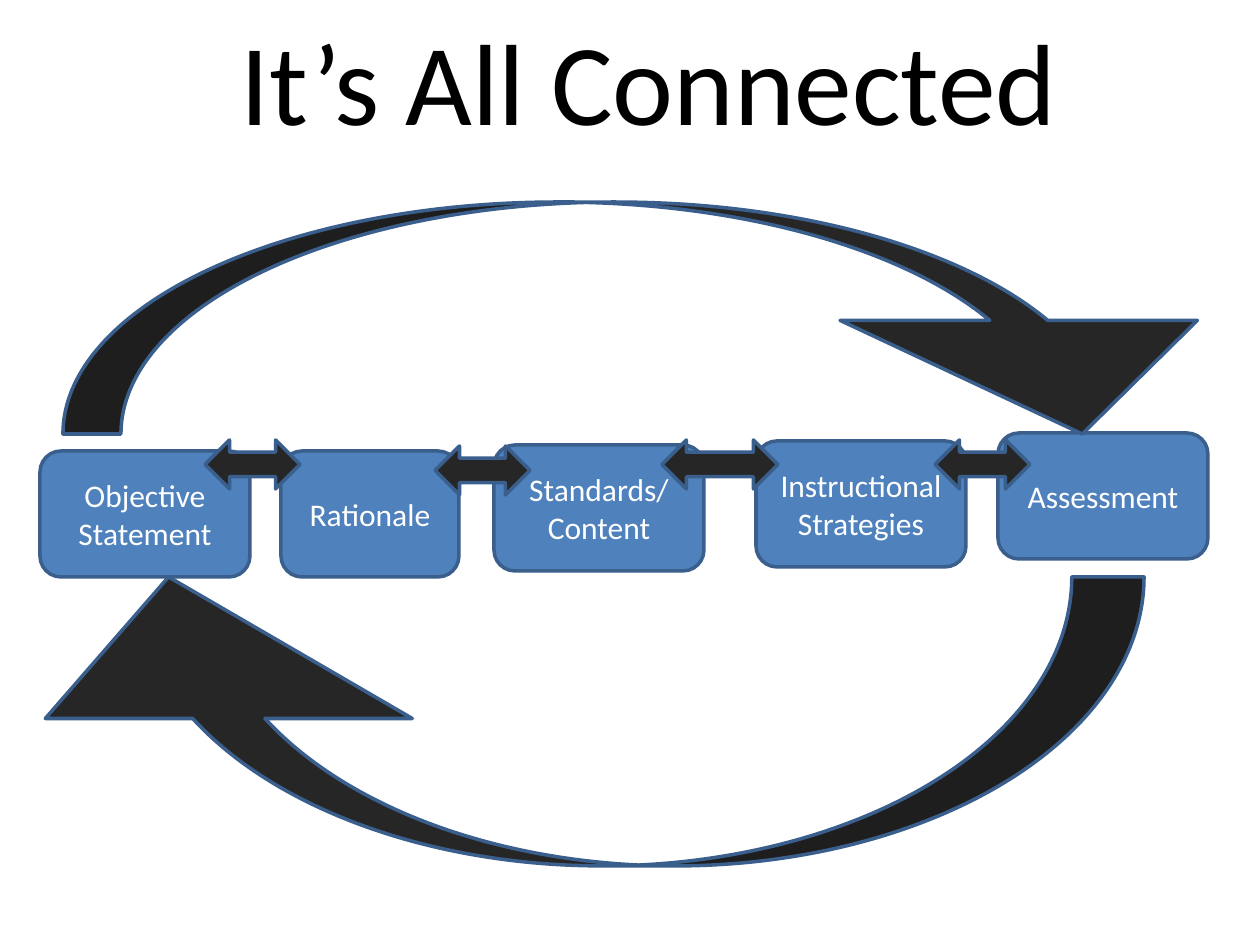
from pptx import Presentation
from pptx.dml.color import RGBColor
from pptx.enum.shapes import MSO_SHAPE
from pptx.enum.text import MSO_ANCHOR, PP_ALIGN
from pptx.util import Emu, Pt

ROUNDED = MSO_SHAPE.ROUNDED_RECTANGLE
DOUBLE_ARROW = MSO_SHAPE.LEFT_RIGHT_ARROW
CURVED_ARROW = MSO_SHAPE.CURVED_UP_ARROW
CENTER = PP_ALIGN.CENTER
MIDDLE = MSO_ANCHOR.MIDDLE

BLUE = RGBColor(0x4F, 0x81, 0xBD)
EDGE = RGBColor(0x3A, 0x5F, 0x8C)
DARK = RGBColor(0x26, 0x26, 0x26)
WHITE = RGBColor(0xFF, 0xFF, 0xFF)
BLACK = RGBColor(0x00, 0x00, 0x00)
FONT = "Calibri"

PX_PER_INCH = 126
STEP_W, STEP_H = 210, 126
LINK_H = 49

# Label, left, top and width, relative to the row of steps
STEPS = [
    ("Objective Statement", 0, 18, STEP_W),
    ("Rationale", 241, 18, 178),
    ("Standards/\nContent", 454, 12, STEP_W),
    ("Instructional Strategies", 716, 8, STEP_W),
    ("Assessment", 958, 0, STEP_W),
]
# Left, top and width, relative to the row of steps
LINKS = [(165, 7, 95), (395, 13, 95), (622, 7, 116), (895, 7, 95)]


def px(n):
    return Emu(round(n * 914400 / PX_PER_INCH))


def add_text(sp, text, size, color):
    """Write one centred paragraph for each line of text."""
    tf = sp.text_frame
    tf.word_wrap = True
    tf.vertical_anchor = MIDDLE
    for i, line in enumerate(text.split("\n")):
        p = tf.add_paragraph() if i else tf.paragraphs[0]
        p.alignment = CENTER
        r = p.add_run()
        r.text = line
        r.font.name = FONT
        r.font.size = Pt(size)
        r.font.color.rgb = color


def add_outlined(s, kind, box, fill):
    sp = s.shapes.add_shape(kind, *map(px, box))
    sp.shadow.inherit = False
    sp.fill.solid()
    sp.fill.fore_color.rgb = fill
    sp.line.color.rgb = EDGE
    sp.line.width = Pt(2)
    return sp


def add_title(s, box):
    sp = s.shapes.add_textbox(*map(px, box))
    add_text(sp, "It’s All Connected", 66, BLACK)


def add_steps(s, left, top):
    for label, x, y, w in STEPS:
        sp = add_outlined(s, ROUNDED, (left + x, top + y, w, STEP_H), BLUE)
        add_text(sp, label, 18, WHITE)


def add_links(s, left, top):
    """Place the two-way arrows that overlap neighbouring steps."""
    for x, y, w in LINKS:
        add_outlined(s, DOUBLE_ARROW, (left + x, top + y, w, LINK_H), DARK)


def add_loop_arrow(s, box, flip, head_width):
    """Place a half-turn arrow; flip is the mirroring attribute to set."""
    sp = add_outlined(s, CURVED_ARROW, box, DARK)
    for i, value in enumerate((0.25, head_width, 0.49)):
        sp.adjustments[i] = value
    sp.rotation = 180
    sp._element.spPr.xfrm.set(flip, "1")


def build_cycle_slide(prs):
    s = prs.slides.add_slide(prs.slide_layouts[6])
    add_steps(s, 40, 433)
    add_loop_arrow(s, (63, 202, 1198, 232), "flipH", 1.54)
    add_links(s, 40, 433)
    add_loop_arrow(s, (-15, 577, 1159, 289), "flipV", 1.27)
    add_title(s, (82, 0, 1134, 158))


def main():
    prs = Presentation()
    prs.slide_width, prs.slide_height = px(1260), px(945)
    build_cycle_slide(prs)
    prs.save("out.pptx")


if __name__ == "__main__":
    main()
